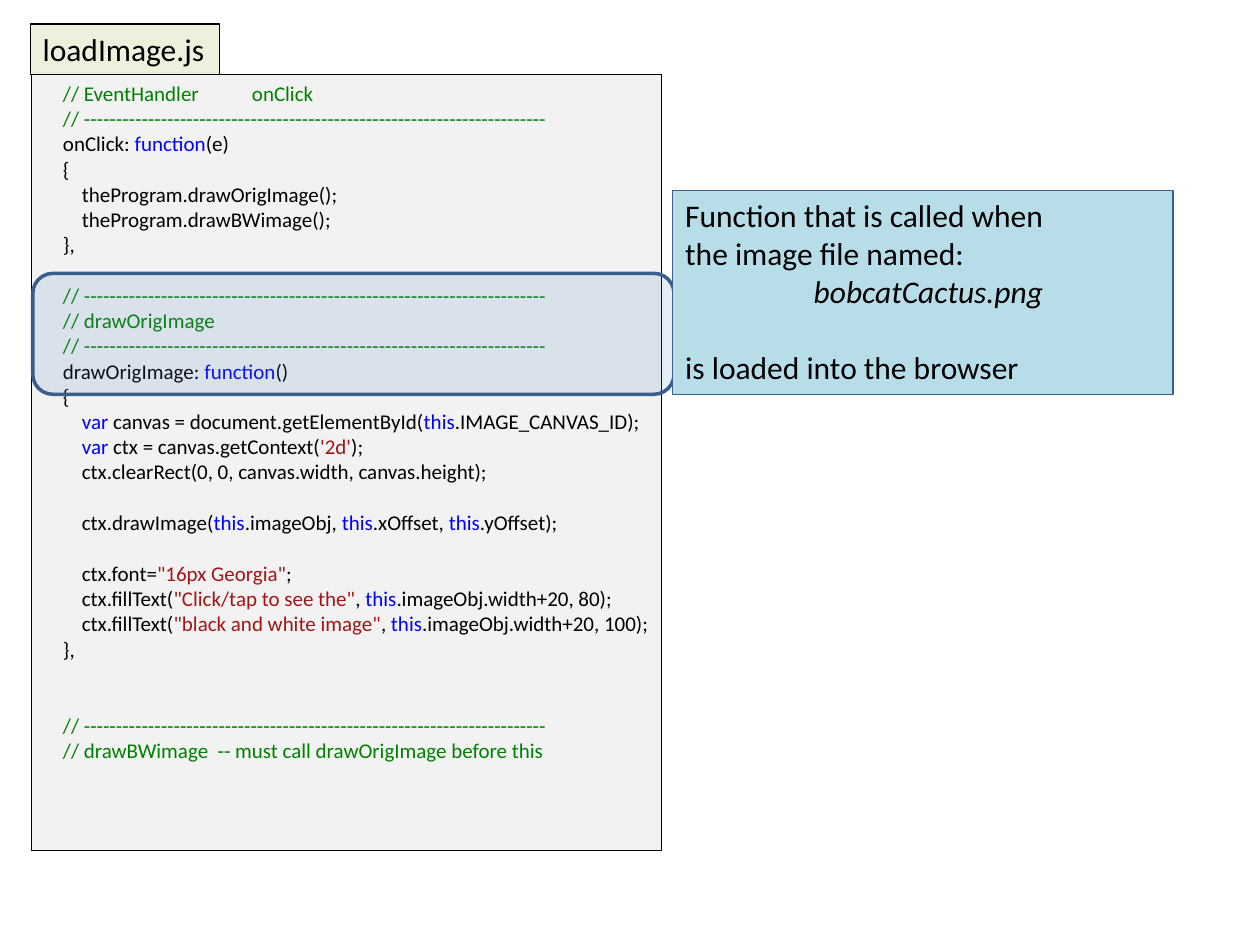
from lxml.etree import SubElement
from pptx import Presentation
from pptx.dml.color import RGBColor
from pptx.enum.shapes import MSO_SHAPE
from pptx.enum.text import MSO_ANCHOR, PP_ALIGN
from pptx.oxml.ns import qn
from pptx.util import Inches, Pt

WIDE, HIGH = 10, 7.5
FONT = "Calibri"
LINE = 1.22  # line height as a share of the text size
STEP = 0.15  # one level of code indent, inches
RULE = "// " + "-" * 72
WORDS = {"function", "var", "this"}

# Code lines: (level, blank lines above, text); "|" parts the coloured tokens
CODE = [
    (0, 0, "// EventHandler\tonClick"),
    (0, 0, RULE),
    (0, 0, "onClick: |function|(e)"),
    (0, 0, "{"),
    (1, 0, "theProgram.drawOrigImage();"),
    (1, 0, "theProgram.drawBWimage();"),
    (0, 0, "},"),
    (0, 1, RULE),
    (0, 0, "// drawOrigImage"),
    (0, 0, RULE),
    (0, 0, "drawOrigImage: |function|()"),
    (0, 0, "{"),
    (1, 0, "var| canvas = document.getElementById(|this|.IMAGE_CANVAS_ID);"),
    (1, 0, "var| ctx = canvas.getContext(|'2d'|);"),
    (1, 0, "ctx.clearRect(0, 0, canvas.width, canvas.height);"),
    (1, 1, "ctx.drawImage(|this|.imageObj, |this|.xOffset, |this|.yOffset);"),
    (1, 1, 'ctx.font=|"16px Georgia"|;'),
    (1, 0, 'ctx.fillText(|"Click/tap to see the"|, |this|.imageObj.width+20, 80);'),
    (1, 0, 'ctx.fillText(|"black and white image"|, |this|.imageObj.width+20, 100);'),
    (0, 0, "},"),
    (0, 2, RULE),
    (0, 0, "// drawBWimage  -- must call drawOrigImage before this"),
]


def paint(color, value):
    color.rgb = RGBColor.from_string(value)


def add_box(slide, kind, place, fill, line, width=0.75):
    """Add a filled, outlined shape; place is left, top, width, height."""
    box = slide.shapes.add_shape(kind, *map(Inches, place))
    box.shadow.inherit = False
    box.fill.solid()
    paint(box.fill.fore_color, fill)
    paint(box.line.color, line)
    box.line.width = Pt(width)
    box.text_frame.vertical_anchor = MSO_ANCHOR.TOP
    return box


def fade(box, share):
    color = box.fill._xPr.find(qn("a:solidFill"))[0]
    SubElement(color, qn("a:alpha"), val=str(int(share * 100000)))


def add_line(frame, first, parts, size, indent=0, gap=0, italic=False):
    """Add a paragraph of (text, colour) parts, with gap blank lines above."""
    para = frame.paragraphs[0] if first else frame.add_paragraph()
    para.alignment = PP_ALIGN.LEFT
    para.space_before = Pt(round(gap * size * LINE, 2))
    para.font.name = FONT
    para.font.size = Pt(size)
    para.font.italic = italic
    props = para._p.get_or_add_pPr()
    props.set("marL", str(Inches(indent)))
    props.set("indent", "0")
    for text, color in parts:
        run = para.add_run()
        run.text = text
        paint(run.font.color, color)
    return para


def add_tab(para, spot):
    props = para._p.get_or_add_pPr()
    stops = SubElement(props, qn("a:tabLst"))
    SubElement(stops, qn("a:tab"), pos=str(Inches(spot)), algn="l")
    props.insert(list(props).index(props.find(qn("a:defRPr"))), stops)


def tint(token):
    if token.startswith("//"):
        return "008000"
    if token in WORDS:
        return "0000FF"
    return "A31515" if token[0] in "'\"" else "000000"


def add_code(frame):
    frame.word_wrap = True
    frame.margin_left = Inches(0.1 + STEP)
    frame.margin_right = 0
    for row, (level, gap, text) in enumerate(CODE):
        parts = [(token, tint(token)) for token in text.split("|")]
        para = add_line(frame, row == 0, parts, 12, level * STEP, gap)
        if "\t" in text:
            add_tab(para, 2.76)


def add_note(frame):
    frame.word_wrap = True
    rows = [
        ("Function that is called when", 0, 0, False),
        ("the image file named:", 0, 0, False),
        ("bobcatCactus.png", 1.02, 0, True),
        ("is loaded into the browser", 0, 1, False),
    ]
    for row, (text, indent, gap, italic) in enumerate(rows):
        add_line(frame, row == 0, [(text, "000000")], 18, indent, gap, italic)


def main():
    deck = Presentation()
    deck.slide_width, deck.slide_height = Inches(WIDE), Inches(HIGH)
    slide = deck.slides.add_slide(deck.slide_layouts[6])
    rect = MSO_SHAPE.RECTANGLE

    # File name tab and code panel
    label = add_box(slide, rect, (0.24, 0.19, 1.5, 0.4), "EFEFDD", "000000")
    label.text_frame.word_wrap = False
    add_line(label.text_frame, True, [("loadImage.js", "000000")], 18)
    panel = add_box(slide, rect, (0.25, 0.59, 5, 6.16), "F2F2F2", "000000")
    add_code(panel.text_frame)

    # Highlight over the function, with its note
    mark = add_box(slide, MSO_SHAPE.ROUNDED_RECTANGLE,
                   (0.26, 2.17, 5.09, 0.96), "4F81BD", "3A5F8C", 2)
    fade(mark, 0.15)
    note = add_box(slide, rect, (5.34, 1.51, 3.97, 1.62), "B7DEE8", "3A5F8C")
    add_note(note.text_frame)

    deck.save("out.pptx")


if __name__ == "__main__":
    main()
